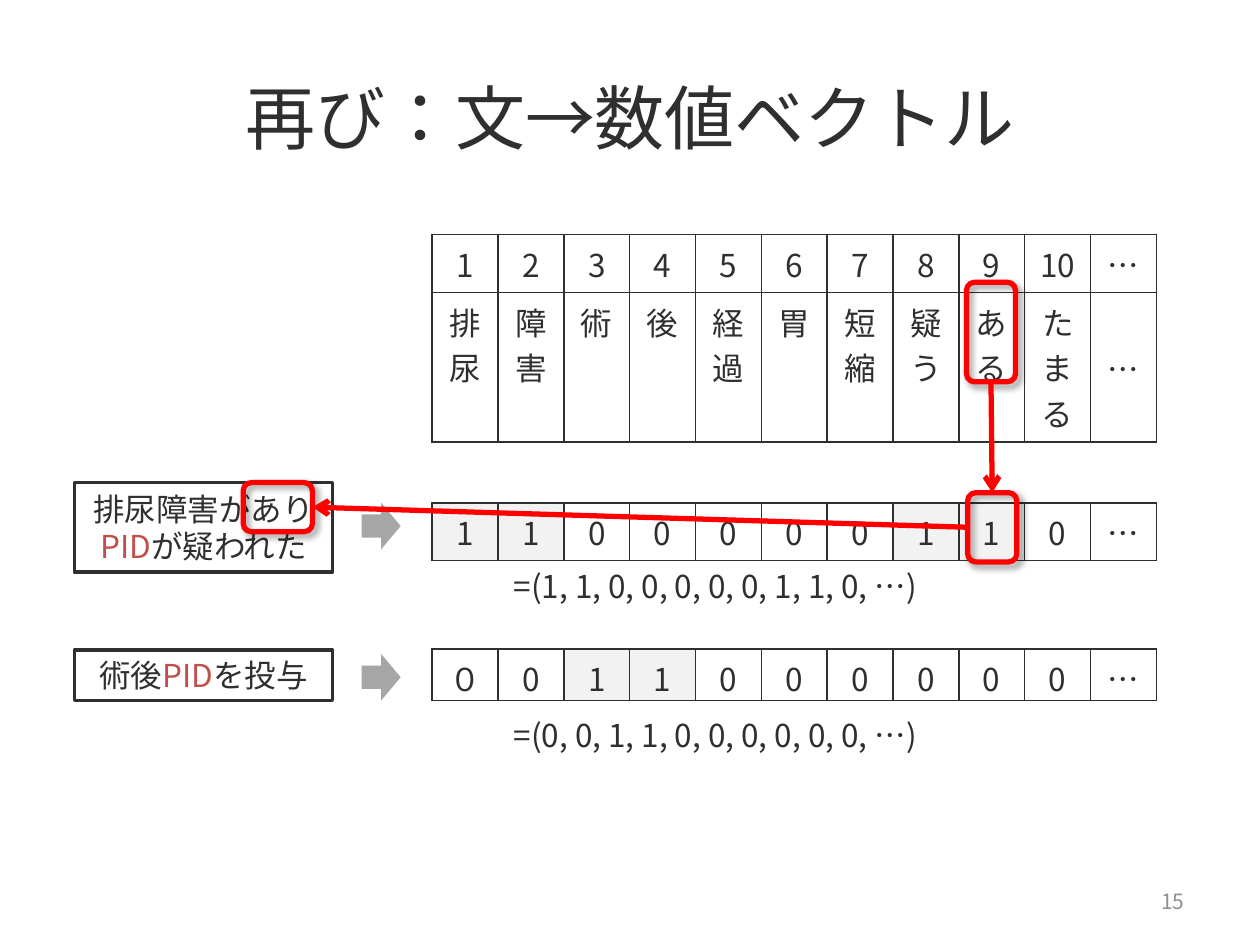
"""Build a slide that turns sentences into numeric vectors."""
import lxml.etree
import pptx
import pptx.dml.color
import pptx.enum.lang
import pptx.enum.shapes
import pptx.enum.text
import pptx.oxml
import pptx.oxml.ns
import pptx.util

Inches = pptx.util.Inches
Pt = pptx.util.Pt
RGBColor = pptx.dml.color.RGBColor
Shape = pptx.enum.shapes.MSO_SHAPE
Align = pptx.enum.text.PP_ALIGN
Anchor = pptx.enum.text.MSO_ANCHOR
qn = pptx.oxml.ns.qn

FONT = "Noto Sans CJK JP"
INK = RGBColor(0x2F, 0x2F, 0x2F)
ACCENT = RGBColor(0xC0, 0x50, 0x4D)
PAGE_GRAY = RGBColor(0x8F, 0x8F, 0x8F)
ARROW_GRAY = RGBColor(0xA6, 0xA6, 0xA6)
SHADE = RGBColor(0xF2, 0xF2, 0xF2)
WHITE = RGBColor(0xFF, 0xFF, 0xFF)
RED = RGBColor(0xFF, 0x00, 0x00)

TABLE_LEFT, TABLE_WIDTH, ROW_HEIGHT = 3.43, 5.75, 0.41
WORDS = ["排尿", "障害", "術", "後", "経過", "胃", "短縮", "疑う", "ある", "たまる", "…"]
NUMBERS = [str(number) for number in range(1, 11)] + ["…"]
FIRST_VECTOR = list("1100000110…")
SECOND_VECTOR = list("０011000000…")

SHADOW = (
    '<a:effectLst xmlns:a="http://schemas.openxmlformats.org/drawingml/2006/main">'
    '<a:outerShdw blurRad="50800" dist="38100" dir="2700000" algn="tl" rotWithShape="0">'
    '<a:srgbClr val="000000"><a:alpha val="40000"/></a:srgbClr>'
    "</a:outerShdw></a:effectLst>"
)


def apply_format(target, values):
    """Set each named attribute on the target."""
    for name, value in values.items():
        setattr(target, name, value)


def write_text(frame, spans, align=Align.CENTER, size=18):
    """Write (text, color) spans as the single paragraph of a text frame."""
    para = frame.paragraphs[0]
    para.alignment = align
    for text, color in spans:
        span = para.add_run()
        span.text = text
        apply_format(span.font, {
            "name": FONT,
            "size": Pt(size),
            "language_id": pptx.enum.lang.MSO_LANGUAGE_ID.JAPANESE,
        })
        span.font.color.rgb = color
        east_asian = lxml.etree.SubElement(span.font._element, qn("a:ea"))
        east_asian.set("typeface", FONT)


def add_label(page, place, text, color=INK, wrap=True, **style):
    """Add a text box without fill or outline."""
    box = page.shapes.add_textbox(*map(Inches, place))
    apply_format(box.text_frame, {"word_wrap": wrap, "vertical_anchor": Anchor.MIDDLE})
    write_text(box.text_frame, [(text, color)], **style)


def add_figure(page, kind, place, fill=None, line=None, width=0):
    """Add a preset shape with the given fill and outline."""
    figure = page.shapes.add_shape(kind, *map(Inches, place))
    figure.shadow.inherit = False
    if fill is None:
        figure.fill.background()
    else:
        figure.fill.solid()
        figure.fill.fore_color.rgb = fill
    if line is None:
        figure.line.fill.background()
    else:
        figure.line.color.rgb = line
        figure.line.width = Pt(width)
    return figure


def add_sentence(page, place, before, after):
    """Add an outlined sentence box with the drug name accented."""
    box = add_figure(page, Shape.RECTANGLE, place, WHITE, INK, 2)
    apply_format(box.text_frame, {"word_wrap": True, "vertical_anchor": Anchor.MIDDLE})
    write_text(box.text_frame, [(before, INK), ("PID", ACCENT), (after, INK)])


def add_ring(page, place):
    """Add a red rounded outline with a soft shadow."""
    ring = add_figure(page, Shape.ROUNDED_RECTANGLE, place, line=RED, width=3)
    properties = ring._element.spPr
    properties.remove(properties.find(qn("a:effectLst")))
    properties.append(pptx.oxml.parse_xml(SHADOW))
    return ring


def add_link(page, start, start_site, end, end_site):
    """Join two rings with a red arrow."""
    link = page.shapes.add_connector(pptx.enum.shapes.MSO_CONNECTOR.STRAIGHT, 0, 0, 0, 0)
    link.begin_connect(start, start_site)
    link.end_connect(end, end_site)
    link.line.color.rgb = RED
    link.line.width = Pt(3)
    head = lxml.etree.SubElement(link.line._get_or_add_ln(), qn("a:tailEnd"))
    head.set("type", "arrow")
    lxml.etree.SubElement(link._element.spPr, qn("a:effectLst"))


def add_borders(cell):
    """Draw a thin line on every side of a cell."""
    properties = cell._tc.get_or_add_tcPr()
    for side in ("a:lnL", "a:lnR", "a:lnT", "a:lnB"):
        line = lxml.etree.SubElement(properties, qn(side), w=str(Pt(1)))
        fill = lxml.etree.SubElement(line, qn("a:solidFill"))
        lxml.etree.SubElement(fill, qn("a:srgbClr"), val=str(INK))


def add_grid(page, top, rows, heights, shaded=(), bottom_margin=0.05):
    """Add a bordered table, shading the listed columns."""
    place = (TABLE_LEFT, top, TABLE_WIDTH, sum(heights))
    grid = page.shapes.add_table(len(rows), len(rows[0]), *map(Inches, place)).table
    apply_format(grid, {"first_row": False, "horz_banding": False})
    for row, texts, height in zip(grid.rows, rows, heights):
        row.height = Inches(height)
        for column, (cell, text) in enumerate(zip(row.cells, texts)):
            add_borders(cell)
            cell.fill.solid()
            cell.fill.fore_color.rgb = SHADE if column in shaded else WHITE
            apply_format(cell, {
                "margin_bottom": Inches(bottom_margin),
                "vertical_anchor": Anchor.MIDDLE if text == "…" else Anchor.TOP,
            })
            write_text(cell.text_frame, [(text, INK)])


def main():
    """Build and save the deck."""
    deck = pptx.Presentation()
    deck.slide_width, deck.slide_height = Inches(10), Inches(7.5)
    page = deck.slides.add_slide(deck.slide_layouts[6])

    add_label(page, (0.5, 0.3, 9, 1.25), "再び：文→数値ベクトル", size=40)
    add_label(page, (7.17, 6.95, 2.33, 0.4), "15", PAGE_GRAY, align=Align.RIGHT, size=12)

    add_grid(page, 1.86, [NUMBERS, WORDS], [0.46, 1.19])
    add_grid(page, 3.99, [FIRST_VECTOR], [0.46], shaded=(0, 1, 7, 8))
    add_grid(page, 5.15, [SECOND_VECTOR], [ROW_HEIGHT], shaded=(2, 3), bottom_margin=0)

    add_sentence(page, (0.59, 3.83, 2.05, 0.71), "排尿障害があり", "が疑われた")
    add_sentence(page, (0.59, 5.16, 2.05, 0.4), "術後", "を投与")
    for top, text in ((4.45, "=(1, 1, 0, 0, 0, 0, 0, 1, 1, 0, …)"),
                      (5.63, "=(0, 0, 1, 1, 0, 0, 0, 0, 0, 0, …)")):
        add_label(page, (3.98, top, 4.17, 0.4), text, wrap=False, align=Align.LEFT)
    for top in (3.99, 5.19):
        add_figure(page, Shape.RIGHT_ARROW, (2.87, top, 0.31, 0.37), ARROW_GRAY)

    word_ring = add_ring(page, (7.67, 2.24, 0.39, 0.79))
    value_ring = add_ring(page, (7.68, 3.91, 0.39, 0.55))
    phrase_ring = add_ring(page, (1.93, 3.83, 0.55, 0.39))
    add_link(page, word_ring, 2, value_ring, 0)
    add_link(page, value_ring, 1, phrase_ring, 3)
    deck.save("out.pptx")


if __name__ == "__main__":
    main()
